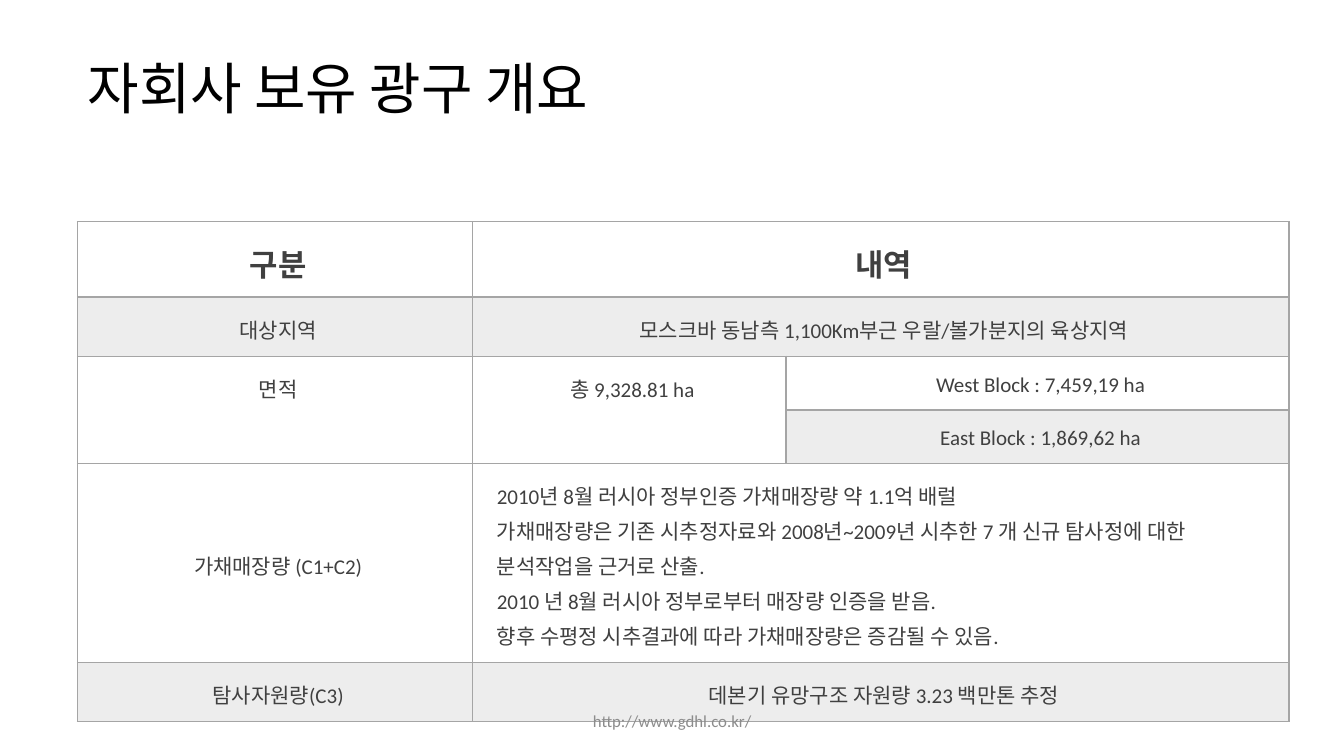
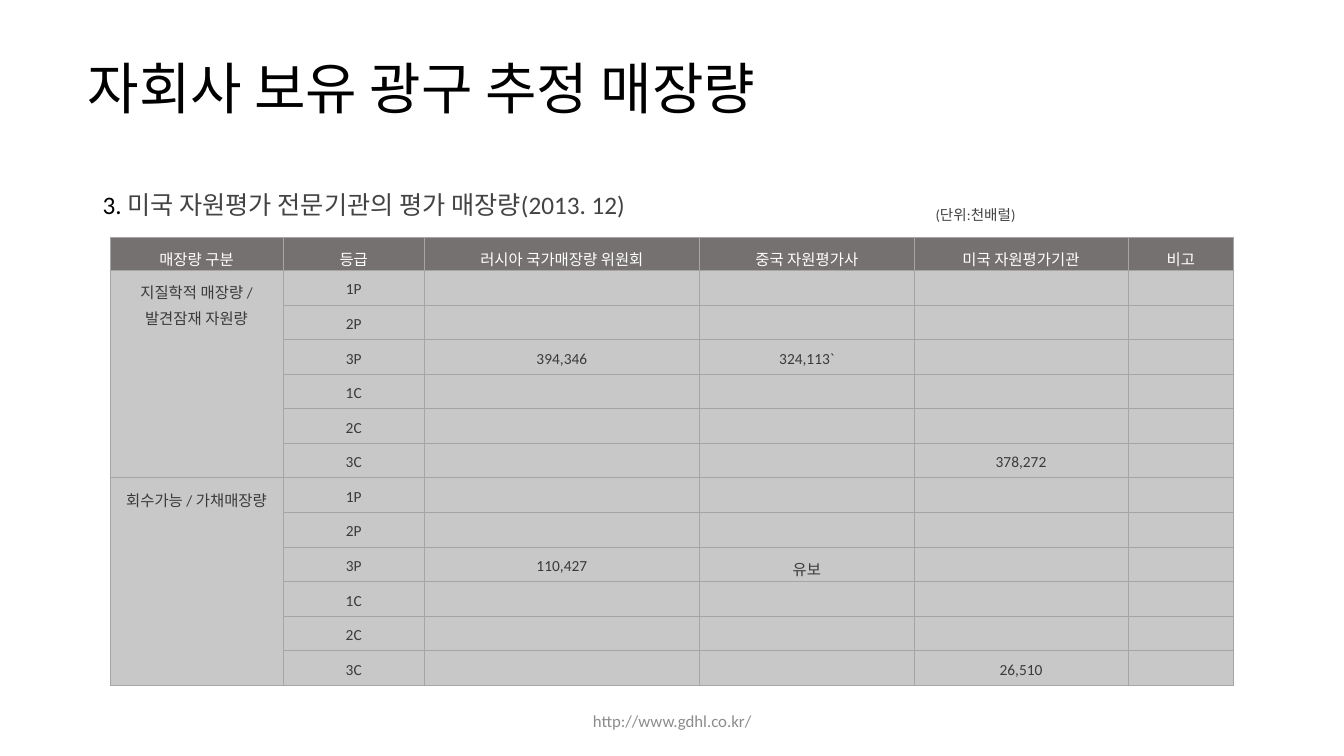
from pptx import Presentation
from pptx.dml.color import RGBColor as Rgb
from pptx.enum.text import MSO_ANCHOR as Anchor, MSO_AUTO_SIZE as Fit, PP_ALIGN as Align
from pptx.oxml.ns import qn
from pptx.oxml.xmlchemy import OxmlElement as Elem
from pptx.util import Pt

FONT = "Calibri"
HUES = {
    "title": "000000", "text": "404040", "note": "434343", "foot": "8C8C8C",
    "line": "A5A5A5", "band": "EDEDED", "head": "767171", "body": "C8C8C8",
    "cell": "3A3A3A", "white": "FFFFFF",
}
URL = "http://www.gdhl.co.kr/"
LEFT, UP = "<", "^"

AREA = {
    "title": "자회사 보유 광구 개요",
    "at": (55.4, 158.4),
    "cols": [282.2, 223.9, 359.3],
    "rows": [41, 32.4, 32.4, 32.4, 103.7, 32.4],
    "pad": (17.3, 8.64, 13, 8.64),
    "cells": [
        ["구분", "내역", LEFT],
        ["대상지역", "모스크바 동남측 1,100Km부근 우랄/볼가분지의 육상지역", LEFT],
        ["면적", "총 9,328.81 ha", "West Block : 7,459,19 ha"],
        [UP, UP, "East Block : 1,869,62 ha"],
        ["가채매장량 (C1+C2)",
         "2010년 8월 러시아 정부인증 가채매장량 약 1.1억 배럴\n"
         "가채매장량은 기존 시추정자료와 2008년~2009년 시추한 7 개 신규 탐사정에 대한 "
         "분석작업을 근거로 산출.\n"
         "2010 년 8월 러시아 정부로부터 매장량 인증을 받음.\n"
         "향후 수평정 시추결과에 따라 가채매장량은 증감될 수 있음.", LEFT],
        ["탐사자원량(C3)", "데본기 유망구조 자원량 3.23 백만톤 추정", LEFT],
    ],
}

RANKS = ["1P", "2P", "3P", "1C", "2C", "3C"]
GROUPS = [
    ("지질학적 매장량 / 발견잠재 자원량",
     {"3P": ["394,346", "324,113`", ""], "3C": ["", "", "378,272"]}),
    ("회수가능 / 가채매장량",
     {"3P": ["110,427", "유보", ""], "3C": ["", "", "26,510"]}),
]
HEADS = ["매장량 구분", "등급", "러시아 국가매장량 위원회", "중국 자원평가사",
         "미국 자원평가기관", "비고"]
RESERVE = {
    "title": "자회사 보유 광구 추정 매장량",
    "at": (78.5, 169.2),
    "cols": [123.8, 100.8, 196.6, 153.4, 152.6, 75.6],
    "rows": [23.9] + [24.7] * 12,
    "pad": (5, 5, 5, 0),
    "cells": [HEADS] + [
        [UP if i else name, rank] + vals.get(rank, [""] * 3) + [""]
        for name, vals in GROUPS for i, rank in enumerate(RANKS)
    ],
}
LEAD = [("3. ", "title", 0), ("미국 자원평가 전문기관의 평가 매장량(2013. 12)", "note", 0),
        ("\t", "note", 0), ("(단위:천배럴)", "note", -25000)]


def add_run(para, text, size, hue, bold=False):
    run = para.add_run()
    run.text = text
    font = run.font
    font.name, font.size, font.bold = FONT, Pt(size), bold
    font.color.rgb = Rgb.from_string(HUES[hue])
    return run


def add_box(slide, left, top, width, height):
    box = slide.shapes.add_textbox(Pt(left), Pt(top), Pt(width), Pt(height))
    box.text_frame.word_wrap = True
    return box.text_frame


def add_page(deck, text):
    slide = deck.slides.add_slide(deck.slide_layouts[5])
    title = slide.shapes.title
    title.left, title.top, title.width, title.height = Pt(55.4), Pt(19.4), Pt(555.8), Pt(91.4)
    frame = title.text_frame
    frame.auto_size = Fit.NONE
    frame.vertical_anchor = Anchor.MIDDLE
    para = frame.paragraphs[0]
    para.alignment, para.line_spacing = Align.LEFT, 0.9
    add_run(para, text, 40, "title")
    return slide


def add_foot(slide):
    frame = add_box(slide, 318.2, 500.4, 324, 28.8)
    frame.vertical_anchor = Anchor.MIDDLE
    para = frame.paragraphs[0]
    para.alignment = Align.CENTER
    add_run(para, URL, 12, "foot")


def edge(cell, width, low):
    props = cell._tc.get_or_add_tcPr()
    for side in ("L", "R", "T", "B"):
        line = Elem(f"a:ln{side}")
        line.set("w", str(Pt(low if side == "B" else width)))
        fill = Elem("a:solidFill")
        color = Elem("a:srgbClr")
        color.set("val", HUES["line"])
        fill.append(color)
        line.append(fill)
        props.append(line)


def fill_cell(cell, text, pad, size, hue, bold, align, anchor):
    cell.margin_left, cell.margin_top, cell.margin_right, cell.margin_bottom = map(Pt, pad)
    cell.vertical_anchor = anchor
    frame = cell.text_frame
    for i, line in enumerate(text.split("\n")):
        para = frame.add_paragraph() if i else frame.paragraphs[0]
        para.alignment, para.line_spacing = align, 1.15
        if line:
            add_run(para, line, size, hue, bold)
        else:
            end = Elem("a:endParaRPr")
            end.set("sz", str(size * 100))
            para._p.append(end)


def add_grid(slide, data, look):
    cells, cols, rows = data["cells"], data["cols"], data["rows"]
    table = slide.shapes.add_table(
        len(rows), len(cols), *map(Pt, data["at"]), Pt(sum(cols)), Pt(sum(rows))).table
    table.first_row = table.horz_banding = False
    for col, width in zip(table.columns, cols):
        col.width = Pt(width)
    for row, height in zip(table.rows, rows):
        row.height = Pt(height)
    for r, line in enumerate(cells):
        for c, text in enumerate(line):
            cell = table.cell(r, c)
            style = look(r, c, text)
            edge(cell, *style["edge"])
            if style["fill"]:
                cell.fill.solid()
                cell.fill.fore_color.rgb = Rgb.from_string(HUES[style["fill"]])
            else:
                cell.fill.background()
            shown = "" if text in (LEFT, UP) else text
            fill_cell(cell, shown, data["pad"], style["size"], style["hue"],
                      style.get("bold", False), style.get("align", Align.CENTER),
                      style.get("anchor", Anchor.TOP))
    for r, line in enumerate(cells):
        for c, text in enumerate(line):
            wide = c + 1 < len(line) and line[c + 1] == LEFT
            last = r
            while last + 1 < len(cells) and cells[last + 1][c] == UP:
                last += 1
            if text not in (LEFT, UP) and (wide or last > r):
                table.cell(r, c).merge(table.cell(last, c + wide))


def area_look(r, c, text):
    head = r == 0
    band = r in (1, 5) or (r, c) == (3, 2)
    tall = r == 2 and c < 2
    return {
        "edge": (1, 2 if head else 1), "fill": "band" if band else None,
        "size": 22 if head else 15, "hue": "text", "bold": head,
        "align": Align.LEFT if "\n" in text else Align.CENTER,
        "anchor": Anchor.TOP if tall else Anchor.MIDDLE,
    }


def reserve_look(r, c, text):
    return {"edge": (0.5, 0.5), "fill": "body" if r else "head",
            "size": 11, "hue": "cell" if r else "white"}


def add_lead(slide):
    frame = add_box(slide, 66.2, 131.8, 815.8, 28.8)
    para = frame.paragraphs[0]
    para.space_after = Pt(6)
    tabs = Elem("a:tabLst")
    tab = Elem("a:tab")
    tab.set("pos", str(Pt(595)))
    tab.set("algn", "l")
    tabs.append(tab)
    para._p.get_or_add_pPr().append(tabs)
    for text, hue, base in LEAD:
        run = add_run(para, text, 18, hue)
        if base:
            run._r.find(qn("a:rPr")).set("baseline", str(base))


def main():
    deck = Presentation()
    deck.slide_width, deck.slide_height = Pt(960), Pt(540)
    area = add_page(deck, AREA["title"])
    add_grid(area, AREA, area_look)
    add_foot(area)
    stock = add_page(deck, RESERVE["title"])
    add_lead(stock)
    add_grid(stock, RESERVE, reserve_look)
    add_foot(stock)
    deck.save("out.pptx")


if __name__ == "__main__":
    main()
